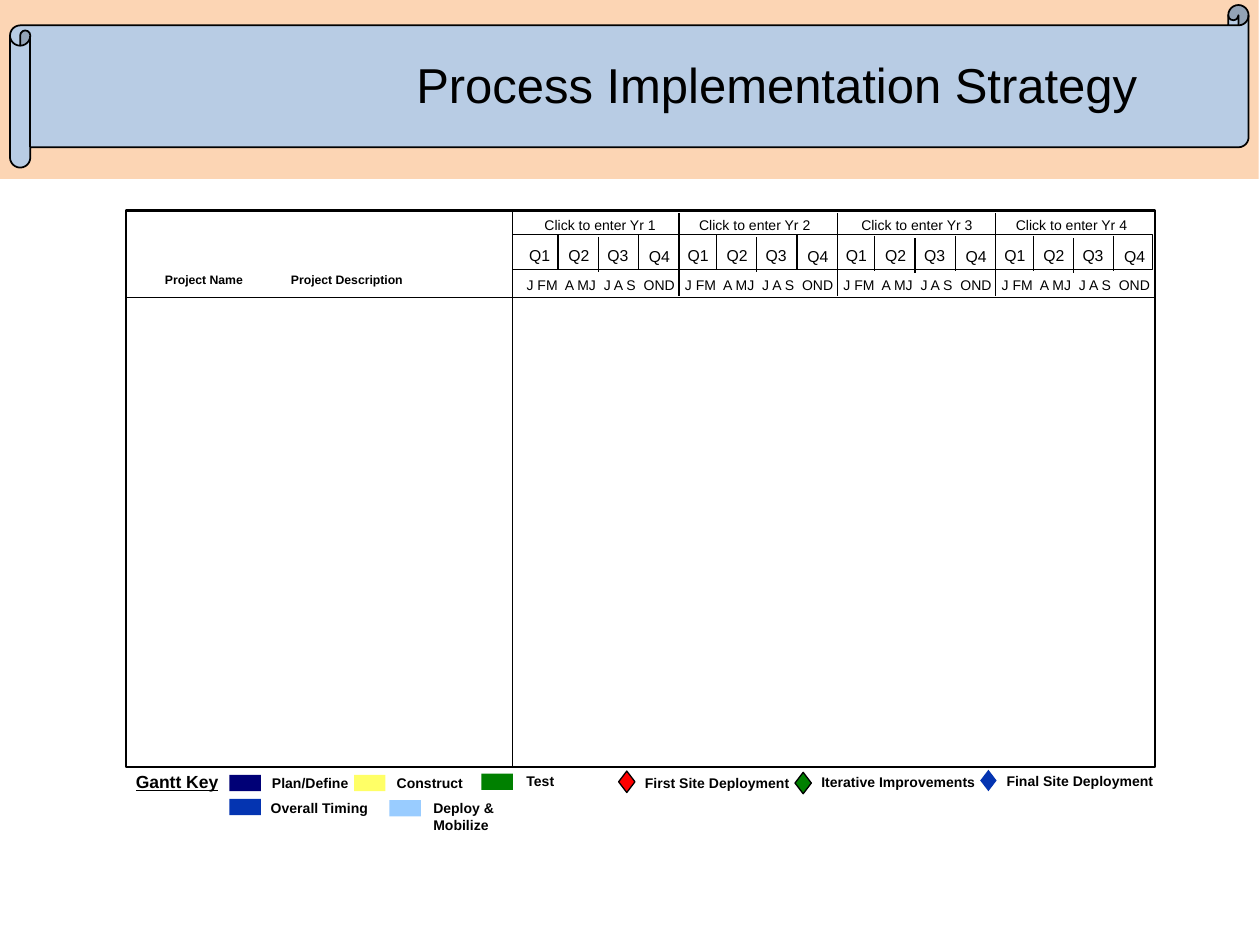
from lxml import etree
from pptx import Presentation
from pptx import util as u
from pptx.dml.color import RGBColor
from pptx.enum import shapes, text
from pptx.oxml.ns import qn

FONT = "Arial"
BLACK = "000000"
NAVY = "000076"
BLUE = "0434B1"
GREEN = "008000"
SHAPE = shapes.MSO_SHAPE
ALIGN = text.PP_ALIGN
ANCHOR = text.MSO_ANCHOR


def rgb(value):
    """Return the colour for a hex string."""
    return RGBColor.from_string(value)


def add_box(s, kind, x, y, w, h, fill=None, line=None, width=0.75):
    """Add a preset shape with an optional fill and outline."""
    sp = s.shapes.add_shape(kind, u.Inches(x), u.Inches(y), u.Inches(w), u.Inches(h))
    sp.shadow.inherit = False
    if fill:
        sp.fill.solid()
        sp.fill.fore_color.rgb = rgb(fill)
    else:
        sp.fill.background()
    if line:
        sp.line.color.rgb = rgb(line)
        sp.line.width = u.Pt(width)
    else:
        sp.line.fill.background()
    return sp


def add_line(s, x1, y1, x2, y2):
    """Add a thin black rule."""
    cx = s.shapes.add_connector(shapes.MSO_CONNECTOR.STRAIGHT, u.Inches(x1),
                                u.Inches(y1), u.Inches(x2), u.Inches(y2))
    cx.line.color.rgb = rgb(BLACK)
    cx.line.width = u.Pt(0.75)
    etree.SubElement(cx.element.spPr, qn("a:effectLst"))


def style_text(tf, size, bold=False, underline=False, align=None):
    """Format the only paragraph of a text frame."""
    p = tf.paragraphs[0]
    p.alignment = align
    for r in p.runs:
        r.font.name = FONT
        r.font.size = u.Pt(size)
        r.font.bold = bold
        r.font.underline = underline
        r.font.color.rgb = rgb(BLACK)


def add_label(s, label, x, y, w, h, size=8, centred=False, **style):
    """Add a one-line text box."""
    tb = s.shapes.add_textbox(u.Inches(x), u.Inches(y), u.Inches(w), u.Inches(h))
    tf = tb.text_frame
    tf.word_wrap = False
    tf.auto_size = text.MSO_AUTO_SIZE.SHAPE_TO_FIT_TEXT
    tf.vertical_anchor = ANCHOR.MIDDLE if centred else ANCHOR.TOP
    tf.text = label
    style_text(tf, size, align=ALIGN.CENTER if centred else ALIGN.LEFT, **style)


def add_banner(s, x, y, w, h):
    """Draw the header band and scroll, with the title on top."""
    add_box(s, SHAPE.RECTANGLE, x, y, w, h, "FCD5B4")
    add_box(s, SHAPE.HORIZONTAL_SCROLL, x + 0.09, y + 0.04, w - 0.17, h - 0.13,
            "B8CCE4", BLACK, 1)
    title = s.shapes.title
    title.left, title.top = u.Inches(x + 2.48), u.Inches(y + 0.38)
    title.width, title.height = u.Inches(7.28), u.Inches(0.55)
    tf = title.text_frame
    tf.margin_left = tf.margin_right = u.Inches(0.05)
    tf.margin_top = tf.margin_bottom = u.Inches(0.05)
    tf.vertical_anchor = ANCHOR.TOP
    tf.auto_size = text.MSO_AUTO_SIZE.NONE
    tf.text = " Process Implementation Strategy"
    style_text(tf, 28, align=ALIGN.CENTER)
    title.element.getparent().append(title.element)


def add_year(s, right, y, index):
    """Draw one year of the timeline, measured back from its right edge."""
    for k in range(1, 4):
        top = y + 0.19 + 0.02 * (k % 2 == 0) + 0.01 * (index > 1)
        add_line(s, right - 0.32 * k, top, right - 0.32 * k, top + 0.28)
    if index < 3:
        add_line(s, right, y + 0.02, right, y + 0.68)
    for k, offset in enumerate((1.29, 0.98, 0.67, 0.34)):
        add_label(s, f"Q{k + 1}", right - offset, y + (0.24 if k == 3 else 0.23),
                  0.37, 0.25, 9, centred=True)
    year_offset = 1.2 if index % 2 else 1.17
    add_label(s, f"Click to enter Yr {index + 1}", right - year_offset, y,
              1.09, 0.23, centred=True)
    add_label(s, "J FM  A MJ  J A S  OND", right - 1.32, y + 0.48, 1.4, 0.23,
              centred=True)


def add_gantt(s, x, y, w, h):
    """Draw the empty Gantt grid and its headings."""
    split = x + 3.07
    year_width = 1.257
    add_box(s, SHAPE.RECTANGLE, x, y, w, h, line=BLACK, width=1.25)
    add_line(s, x, y + 0.69, x + w, y + 0.69)
    add_line(s, split, y, split, y + h)
    add_label(s, "Project Name\tProject Description\t", x + 0.21, y + 0.44,
              2.2, 0.22, 7, centred=True, bold=True)
    add_box(s, SHAPE.RECTANGLE, split, y + 0.19, w - 3.09, 0.28, line=BLACK)
    for i in range(4):
        add_year(s, x + w - 0.01 - (3 - i) * year_width, y, i)


def add_key(s, x, y):
    """Draw the legend of phases and milestones."""
    add_label(s, "Gantt Key", x, y, 0.86, 0.27, 10, bold=True, underline=True)
    phases = [
        ("Plan/Define", NAVY, 0.84, 0.08, 1.08, 0.03, 0.81),
        ("Construct", "FFFF66", 1.83, 0.08, 2.07, 0.03, 0.73),
        ("Test", GREEN, 2.84, 0.07, 3.1, 0.01, 0.43),
        ("Overall Timing", BLUE, 0.84, 0.27, 1.07, 0.23, 0.98),
        ("Deploy & Mobilize", "99CCFF", 2.11, 0.28, 2.36, 0.23, 1.15),
    ]
    milestones = [
        ("First Site Deployment", "FF0000", BLACK, 3.93, 0.05, 0.03, 1.35),
        ("Iterative Improvements", GREEN, BLACK, 5.33, 0.06, 0.02, 1.42),
        ("Final Site Deployment", BLUE, None, 6.8, 0.04, 0.01, 1.37),
    ]
    for label, fill, dx, dy, label_dx, label_dy, w in phases:
        add_box(s, SHAPE.RECTANGLE, x + dx, y + dy, 0.25, 0.13, fill)
        add_label(s, label, x + label_dx, y + label_dy, w, 0.23, bold=True)
    for label, fill, line, dx, dy, label_dy, w in milestones:
        add_box(s, SHAPE.FLOWCHART_DECISION, x + dx, y + dy, 0.13, 0.17, fill, line)
        add_label(s, label, x + dx + 0.11, y + label_dy, w, 0.23, bold=True)


def main():
    """Build the slide and save it."""
    prs = Presentation()
    prs.slide_width, prs.slide_height = u.Inches(10), u.Inches(7.5)
    s = prs.slides.add_slide(prs.slide_layouts.get_by_name("Title Only"))
    add_banner(s, -0.01, 0, 10, 1.42)
    add_gantt(s, 1, 1.67, 8.17, 4.42)
    add_key(s, 0.98, 6.07)
    prs.save("out.pptx")


if __name__ == "__main__":
    main()
